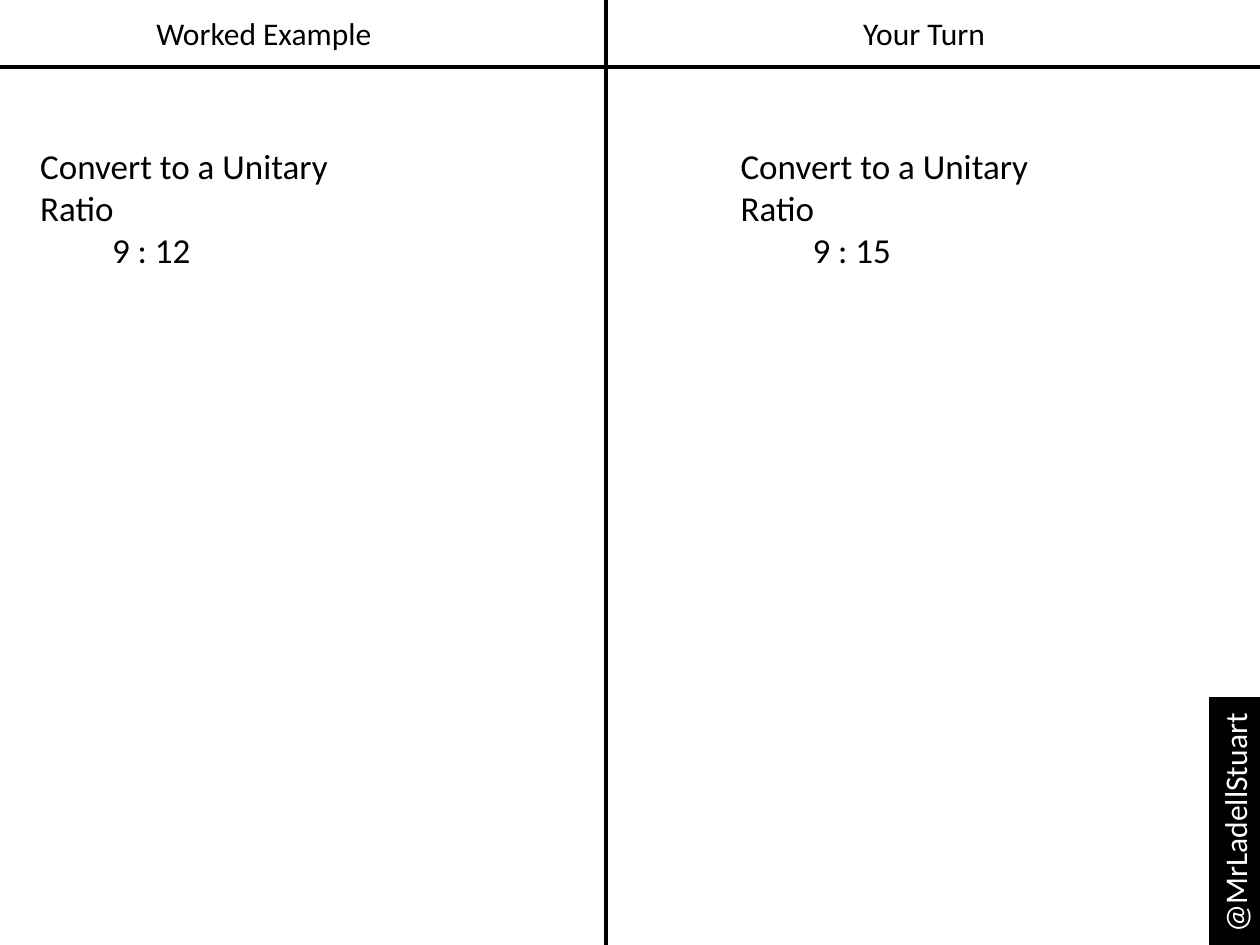
from dataclasses import dataclass

from lxml import etree
from pptx import Presentation
from pptx import util as u
from pptx.dml.color import RGBColor
from pptx.enum import shapes, text
from pptx.oxml.ns import qn


@dataclass(frozen=True)
class Theme:
    font: str = "Calibri"
    ink: RGBColor = RGBColor(0, 0, 0)
    paper: RGBColor = RGBColor(255, 255, 255)
    heading: u.Pt = u.Pt(18)
    body: u.Pt = u.Pt(20)
    rule: u.Pt = u.Pt(2.5)
    outline: u.Pt = u.Pt(0.75)


@dataclass(frozen=True)
class Column:
    heading: str
    heading_left: u.Cm
    ratio: str
    body_left: u.Cm


THEME = Theme()
WIDTH, HEIGHT = u.Cm(25.4), u.Cm(19.05)
DIVIDER_X, HEADER_Y = u.Cm(12.22), u.Cm(1.35)
TASK = "Convert to a Unitary Ratio"
RATIO_INDENT = u.Cm(1.45)
COLUMNS = (
    Column("Worked Example", u.Cm(2.87), "9 : 12", u.Cm(0.56)),
    Column("Your Turn", u.Cm(16.18), "9 : 15", u.Cm(14.68)),
)


def add_run(p, words: str, size: u.Pt, color: RGBColor = THEME.ink) -> None:
    r = p.add_run()
    r.text = words
    r.font.name = THEME.font
    r.font.size = size
    r.font.color.rgb = color


def add_text_box(s, left: int, top: int, width: int, height: int):
    tf = s.shapes.add_textbox(left, top, width, height).text_frame
    tf.word_wrap = True
    tf.auto_size = text.MSO_AUTO_SIZE.SHAPE_TO_FIT_TEXT
    return tf


def add_column(s, column: Column) -> None:
    tf = add_text_box(s, column.heading_left, u.Cm(0.15), u.Cm(4.9), u.Cm(1.02))
    p = tf.paragraphs[0]
    p.alignment = text.PP_ALIGN.CENTER
    add_run(p, column.heading, THEME.heading)

    tf = add_text_box(s, column.body_left, u.Cm(2.79), u.Cm(7.01), u.Cm(2.82))
    add_run(tf.paragraphs[0], TASK, THEME.body)
    p = tf.add_paragraph()
    p._p.get_or_add_pPr().set("marL", str(int(RATIO_INDENT)))
    add_run(p, column.ratio, THEME.body)


def add_rule(s, x1: int, y1: int, x2: int, y2: int) -> None:
    line = s.shapes.add_connector(shapes.MSO_CONNECTOR.STRAIGHT, x1, y1, x2, y2)
    line.line.color.rgb = THEME.ink
    line.line.width = THEME.rule
    etree.SubElement(line._element.spPr, qn("a:effectLst"))


def add_handle_tab(s, words: str) -> None:
    """Add the black tab that reads upwards in the bottom right corner."""
    sp = s.shapes.add_shape(
        shapes.MSO_SHAPE.RECTANGLE, u.Cm(22.4), u.Cm(16.05), u.Cm(4.98), u.Cm(1.02)
    )
    sp.rotation = 270
    sp.shadow.inherit = False
    sp.fill.solid()
    sp.fill.fore_color.rgb = THEME.ink
    sp.line.color.rgb = THEME.ink
    sp.line.width = THEME.outline
    tf = sp.text_frame
    tf.word_wrap = False
    tf.auto_size = text.MSO_AUTO_SIZE.SHAPE_TO_FIT_TEXT
    tf.vertical_anchor = text.MSO_ANCHOR.TOP
    p = tf.paragraphs[0]
    p.alignment = text.PP_ALIGN.LEFT
    add_run(p, words, THEME.heading, THEME.paper)


def main() -> None:
    prs = Presentation()
    prs.slide_width, prs.slide_height = WIDTH, HEIGHT
    s = prs.slides.add_slide(prs.slide_layouts.get_by_name("Blank"))
    for column in COLUMNS:
        add_column(s, column)
    add_rule(s, DIVIDER_X, 0, DIVIDER_X, HEIGHT)
    add_rule(s, 0, HEADER_Y, WIDTH, HEADER_Y)
    add_handle_tab(s, "@MrLadellStuart")
    prs.save("out.pptx")


if __name__ == "__main__":
    main()
